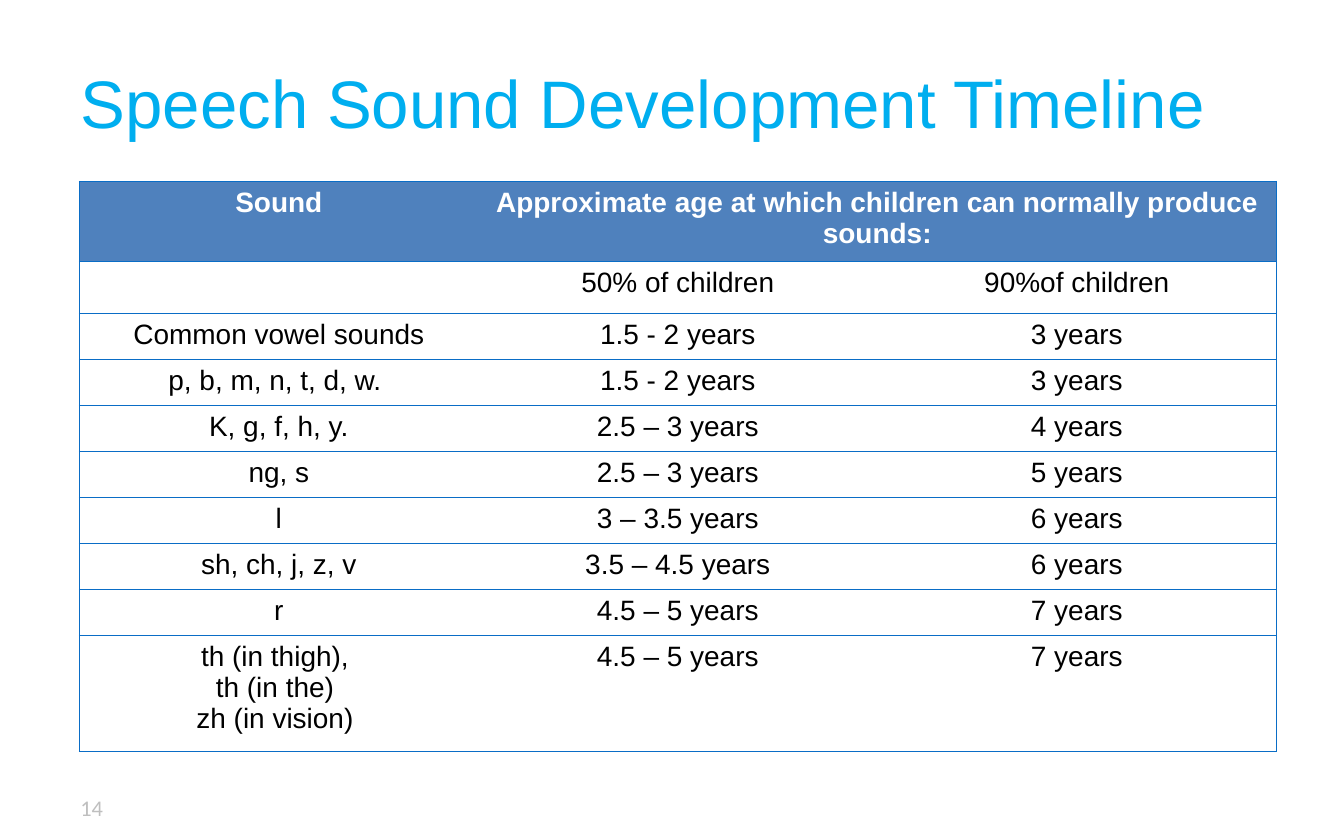
"""Build the speech sound development timeline slide."""
from lxml.etree import SubElement
from pptx import Presentation
from pptx.dml.color import RGBColor
from pptx.enum.text import MSO_ANCHOR, MSO_AUTO_SIZE, PP_ALIGN
from pptx.oxml.ns import qn
from pptx.util import Cm, Pt

CYAN = RGBColor(0x00, 0xAE, 0xEF)
BLUE = RGBColor(0x4F, 0x81, 0xBD)
LINE = RGBColor(0x0A, 0x6D, 0xC6)
GREY = RGBColor(0xBF, 0xBF, 0xBF)
WHITE = RGBColor(0xFF, 0xFF, 0xFF)
BLACK = RGBColor(0x00, 0x00, 0x00)

TITLE = "Speech Sound Development Timeline"
PAGE = "14"
ROWS = [
    ("Sound", "Approximate age at which children can normally produce sounds:", ""),
    ("", "50% of children", "90%of children"),
    ("Common vowel sounds", "1.5 - 2 years", "3 years"),
    ("p, b, m, n, t, d, w. ", "1.5 - 2 years", "3 years"),
    ("K, g, f, h, y.", "2.5 – 3 years", "4 years"),
    ("ng, s", "2.5 – 3 years", "5 years"),
    ("l", "3 – 3.5 years", "6 years"),
    ("sh, ch, j, z, v", "3.5 – 4.5 years", "6 years"),
    ("r", "4.5 – 5 years", "7 years"),
    ("th (in thigh), \nth (in the) \nzh (in vision) ", "4.5 – 5 years", "7 years"),
]
HEIGHTS = [1.52, 0.93] + [0.87] * 7 + [2.19]
COL_WIDTH = 7.54

TITLE_FONT = {"name": "Arial", "size": Pt(36), "color": CYAN}
HEAD_FONT = {"name": "Arial", "size": Pt(15), "bold": True, "color": WHITE}
BODY_FONT = {"name": "Arial", "size": Pt(15), "bold": False, "color": BLACK}
PAGE_FONT = {"name": "Calibri", "size": Pt(12), "color": GREY}


def write(tf, text, fmt, align):
    tf.text = text
    for p in tf.paragraphs:
        p.alignment = align
        for r in p.runs:
            for key, value in fmt.items():
                if key == "color":
                    r.font.color.rgb = value
                else:
                    setattr(r.font, key, value)


def set_borders(cell, sides):
    tc_pr = cell._tc.get_or_add_tcPr()
    for i, side in enumerate("LRTB"):
        ln = SubElement(tc_pr, qn(f"a:ln{side}"), w=str(Pt(0.75)))
        if side in sides:
            fill = SubElement(ln, qn("a:solidFill"))
            SubElement(fill, qn("a:srgbClr"), val=str(LINE))
        else:
            SubElement(ln, qn("a:noFill"))
        tc_pr.insert(i, ln)


def add_title(s):
    sp = s.shapes.title
    sp.left, sp.top, sp.width, sp.height = Cm(1.27), Cm(0.61), Cm(22.86), Cm(2.64)
    tf = sp.text_frame
    tf.auto_size = MSO_AUTO_SIZE.NONE
    tf.vertical_anchor = MSO_ANCHOR.MIDDLE
    write(tf, TITLE, TITLE_FONT, PP_ALIGN.LEFT)


def add_timeline(s):
    cols = len(ROWS[0])
    table = s.shapes.add_table(len(ROWS), cols, Cm(1.5), Cm(3.43),
                               Cm(COL_WIDTH * cols), Cm(sum(HEIGHTS))).table
    table.horz_banding = False
    for col in table.columns:
        col.width = Cm(COL_WIDTH)
    for i, (texts, height) in enumerate(zip(ROWS, HEIGHTS)):
        table.rows[i].height = Cm(height)
        for j, text in enumerate(texts):
            cell = table.cell(i, j)
            cell.margin_top = cell.margin_bottom = Cm(0.1)
            cell.fill.solid()
            cell.fill.fore_color.rgb = WHITE if i else BLUE
            last = j == cols - 1 or (i == 0 and j == 1)
            set_borders(cell, "TB" + "L" * (j == 0) + "R" * last)
            if text:
                write(cell.text_frame, text, BODY_FONT if i else HEAD_FONT, PP_ALIGN.CENTER)
    table.cell(0, 1).merge(table.cell(0, 2))


def add_page_number(s):
    tf = s.shapes.add_textbox(Cm(1.27), Cm(14.88), Cm(1.27), Cm(0.84)).text_frame
    tf.word_wrap = True
    write(tf, PAGE, PAGE_FONT, PP_ALIGN.LEFT)


def main():
    prs = Presentation()
    prs.slide_width, prs.slide_height = Cm(25.4), Cm(15.88)
    s = prs.slides.add_slide(prs.slide_layouts[5])
    add_title(s)
    add_timeline(s)
    add_page_number(s)
    prs.save("out.pptx")


if __name__ == "__main__":
    main()
